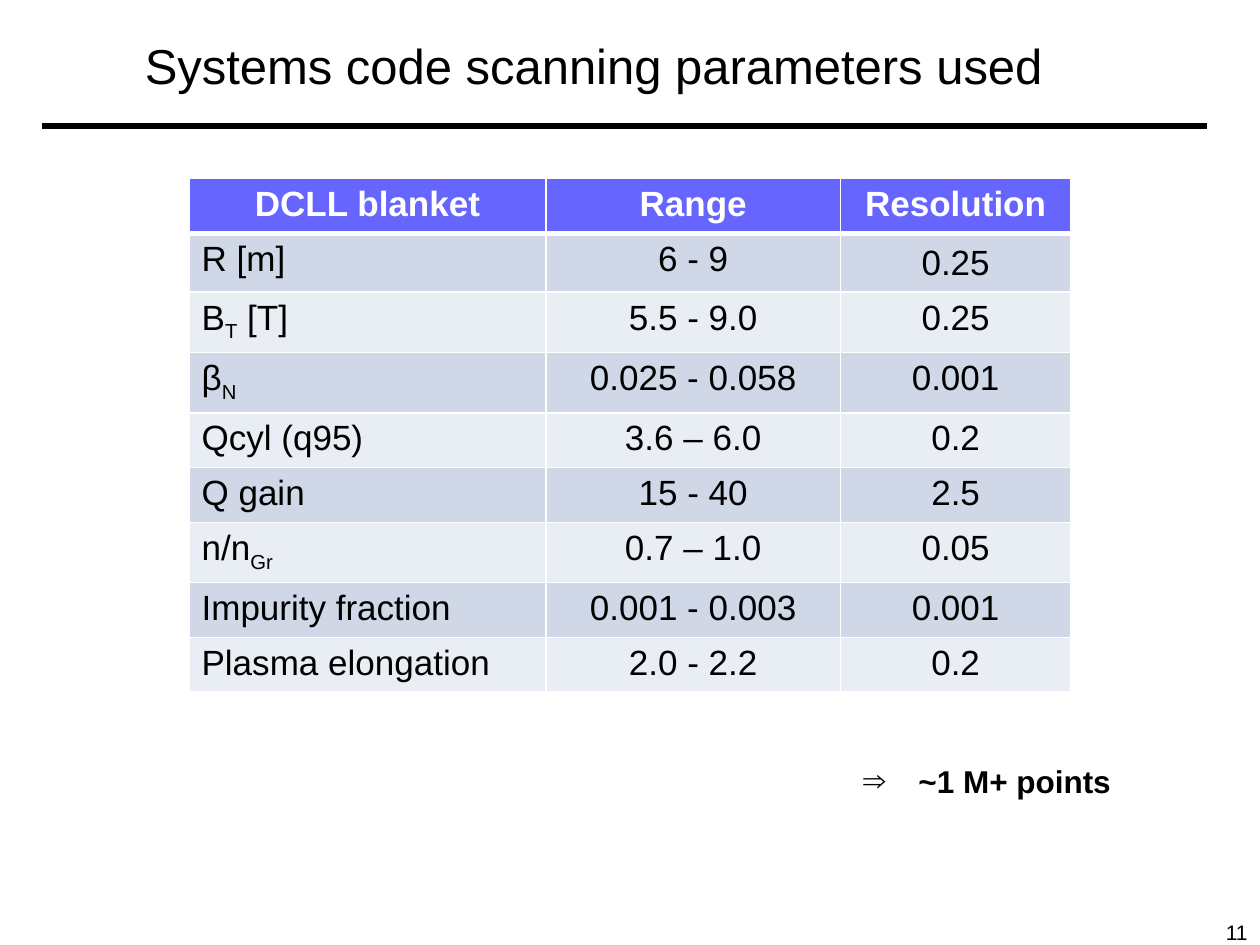
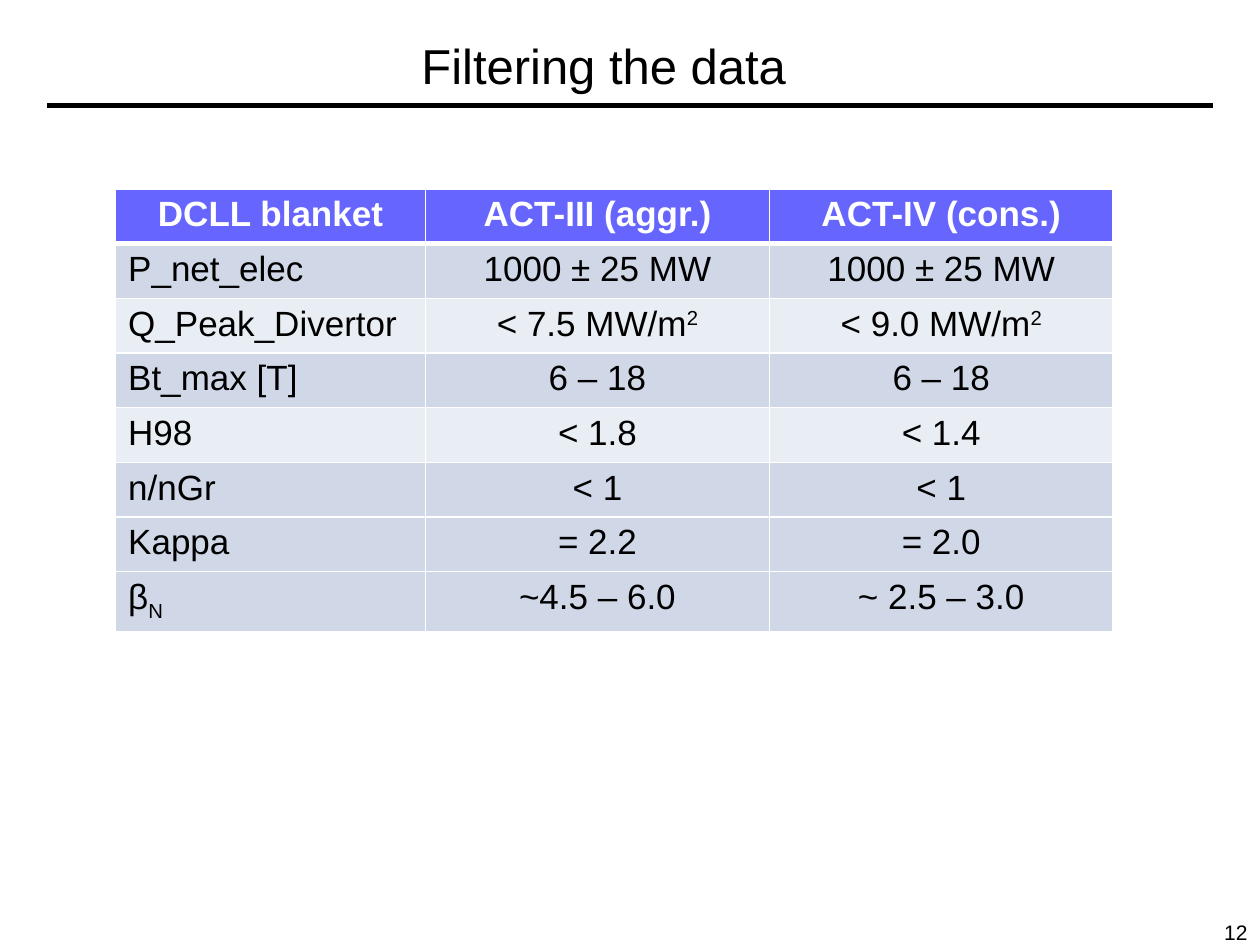
"""Build two slides with the scan and filter parameters of a systems code."""
from lxml.etree import SubElement
from pptx import Presentation
from pptx.dml.color import RGBColor
from pptx.enum.shapes import MSO_CONNECTOR as Connector
from pptx.enum.text import MSO_ANCHOR as Anchor, MSO_AUTO_SIZE as AutoSize, PP_ALIGN as Align
from pptx.oxml.ns import qn
from pptx.util import Cm, Pt

FONT = "Arial"
COLORS = {"ink": "000000", "paper": "FFFFFF", "header": "6666FF", "dark": "D0D8E8", "light": "E9EDF4"}
SUB, SUPER = -25000, 30000
ROW_HEIGHT = 1.04
RULE_WIDTH = 23.5

SLIDES = [
    {
        "number": "11",
        "title": "Systems code scanning parameters used",
        "title_width": 18.85,
        "rule": (0.84, 2.54),
        "table_at": (3.81, 3.6),
        "columns": (7.2, 5.93, 4.65),
        "light_rows": (2, 4, 6, 8),
        "line_spacing": {(1, 2): 1.1},
        "rows": [
            ("DCLL blanket", "Range", "Resolution"),
            ("R [m]", "6 - 9", "0.25"),
            ([("B", 0), ("T", SUB), (" [T]", 0)], "5.5 - 9.0", "0.25"),
            ([("β", 0), ("N", SUB)], "0.025 - 0.058", "0.001"),
            ("Qcyl (q95)", "3.6 – 6.0", "0.2"),
            ("Q gain", "15 - 40", "2.5"),
            ([("n/n", 0), ("Gr", SUB)], "0.7 – 1.0", "0.05"),
            ("Impurity fraction", "0.001 - 0.003", "0.001"),
            ("Plasma elongation", "2.0 - 2.2", "0.2"),
        ],
        "conclusion": " ~1 M+ points",
    },
    {
        "number": "12",
        "title": "Filtering the data",
        "title_width": 19.26,
        "rule": (0.95, 2.12),
        "table_at": (2.33, 3.81),
        "columns": (6.25, 6.93, 6.93),
        "light_rows": (2, 4),
        "line_spacing": {},
        "rows": [
            ("DCLL blanket", "ACT-III (aggr.)", "ACT-IV (cons.)"),
            ("P_net_elec", "1000 ± 25 MW", "1000 ± 25 MW"),
            ("Q_Peak_Divertor", [("< 7.5 MW/m", 0), ("2", SUPER)], [("< 9.0 MW/m", 0), ("2", SUPER)]),
            ("Bt_max [T]", "6 – 18", "6 – 18"),
            ("H98", "< 1.8", "< 1.4"),
            ("n/nGr", "< 1", "< 1"),
            ("Kappa", "= 2.2", "= 2.0"),
            ([("β", 0), ("N", SUB)], "~4.5 – 6.0", "~ 2.5 – 3.0"),
        ],
        "conclusion": None,
    },
]


def color(name):
    return RGBColor.from_string(COLORS[name])


def style(para, size, ink="ink", bold=False, align=Align.LEFT):
    para.alignment = align
    para.font.name = FONT
    para.font.size = Pt(size)
    para.font.bold = bold
    para.font.color.rgb = color(ink)


def add_title(page, text, width):
    title = page.shapes.title
    title.left, title.top, title.width, title.height = Cm(2.54), Cm(0.36), Cm(width), Cm(1.9)
    frame = title.text_frame
    frame.text = text
    frame.auto_size = AutoSize.NONE
    frame.vertical_anchor = Anchor.MIDDLE
    style(frame.paragraphs[0], 28, align=Align.CENTER)


def add_rule(page, left, top):
    rule = page.shapes.add_connector(Connector.STRAIGHT, Cm(left), Cm(top), Cm(left + RULE_WIDTH), Cm(top))
    rule.line.color.rgb = color("ink")
    rule.line.width = Pt(3)
    SubElement(rule._element.spPr, qn("a:effectLst"))


def add_text(page, text, left, top, width, height):
    box = page.shapes.add_textbox(Cm(left), Cm(top), Cm(width), Cm(height))
    box.text_frame.word_wrap = True
    box.text_frame.text = text
    return box.text_frame.paragraphs[0]


def add_conclusion(page, text):
    para = add_text(page, text, 17.15, 15.24, 5.5, 1.02)
    properties = para._p.get_or_add_pPr()
    properties.set("marL", str(Cm(0.94)))
    properties.set("indent", str(-Cm(0.94)))
    SubElement(properties, qn("a:buFont"), typeface=FONT)
    SubElement(properties, qn("a:buChar"), char="⇒")
    style(para, 18, bold=True)


def set_borders(cell, row):
    widths = {"L": 1, "R": 1, "T": 3 if row == 1 else 1, "B": 3 if row == 0 else 1}
    for side, width in widths.items():
        line = SubElement(cell._tc.get_or_add_tcPr(), qn(f"a:ln{side}"), w=str(Pt(width)))
        SubElement(SubElement(line, qn("a:solidFill")), qn("a:srgbClr"), val=COLORS["paper"])


def fill_cell(cell, content, row, column, fill):
    para = cell.text_frame.paragraphs[0]
    for text, baseline in [(content, 0)] if isinstance(content, str) else content:
        span = para.add_run()
        span.text = text
        if baseline:
            span.font._element.set("baseline", str(baseline))
    header = row == 0
    style(para, 20, "paper" if header else "ink", header,
          Align.CENTER if header or column else Align.LEFT)
    set_borders(cell, row)
    cell.fill.solid()
    cell.fill.fore_color.rgb = color(fill)


def add_parameters(page, content):
    rows, columns = content["rows"], content["columns"]
    left, top = content["table_at"]
    table = page.shapes.add_table(len(rows), len(columns), Cm(left), Cm(top),
                                  Cm(sum(columns)), Cm(ROW_HEIGHT * len(rows))).table
    for column, width in zip(table.columns, columns):
        column.width = Cm(width)
    for row, values in enumerate(rows):
        table.rows[row].height = Cm(ROW_HEIGHT)
        fill = "header" if row == 0 else "light" if row in content["light_rows"] else "dark"
        for column, value in enumerate(values):
            fill_cell(table.cell(row, column), value, row, column, fill)
    for position, spacing in content["line_spacing"].items():
        table.cell(*position).text_frame.paragraphs[0].line_spacing = spacing


def main():
    deck = Presentation()
    deck.slide_width, deck.slide_height = Cm(25.4), Cm(19.05)
    for content in SLIDES:
        page = deck.slides.add_slide(deck.slide_layouts[5])
        style(add_text(page, content["number"], 22.43, 18.42, 2.97, 0.63), 12, align=Align.RIGHT)
        add_rule(page, *content["rule"])
        add_title(page, content["title"], content["title_width"])
        add_parameters(page, content)
        if content["conclusion"]:
            add_conclusion(page, content["conclusion"])
    deck.save("out.pptx")


if __name__ == "__main__":
    main()
